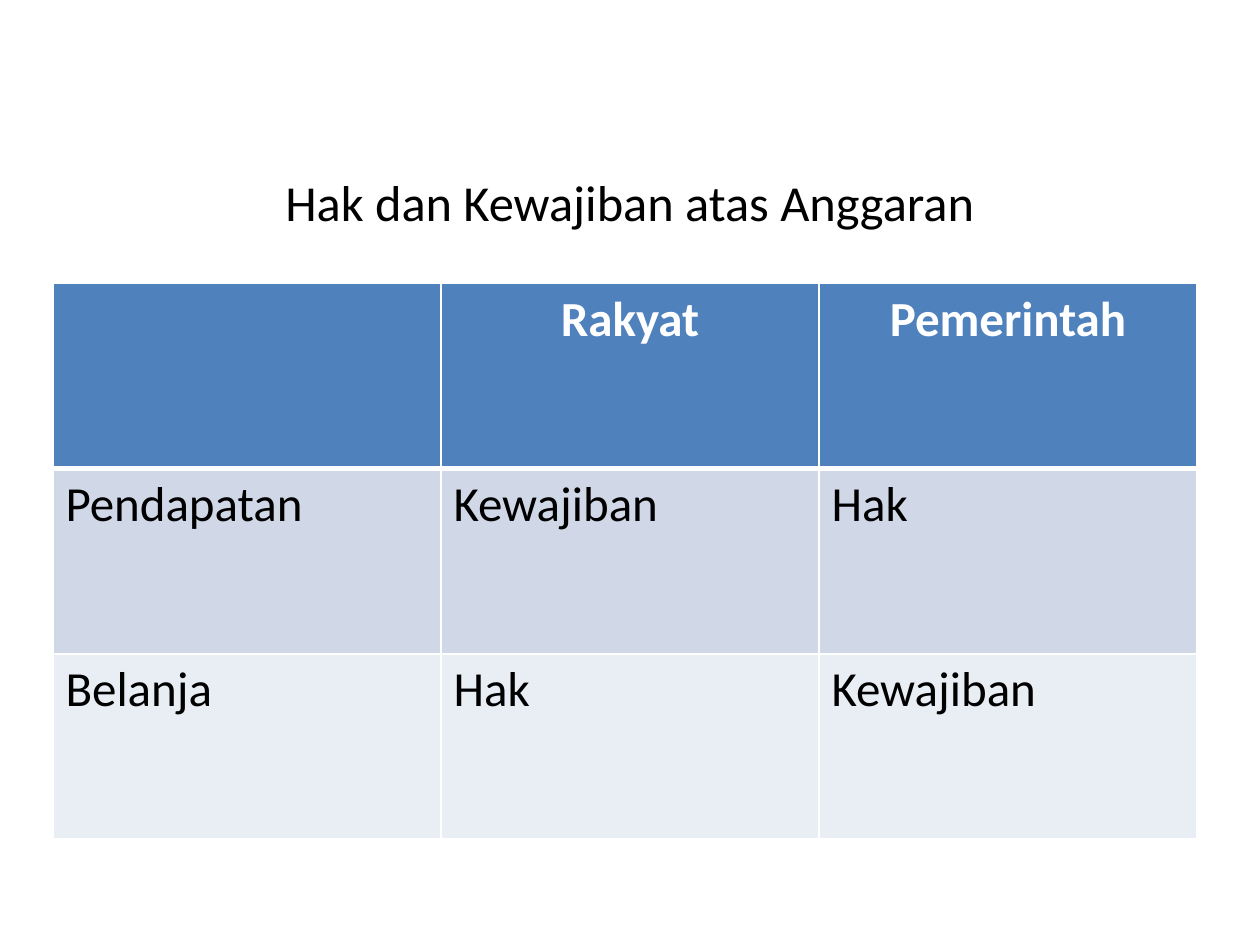
from dataclasses import dataclass

from lxml import etree
from pptx import Presentation
from pptx.dml.color import RGBColor
from pptx.enum.text import MSO_ANCHOR, PP_ALIGN
from pptx.oxml.ns import qn
from pptx.util import Inches, Pt

CENTER, LEFT = PP_ALIGN.CENTER, PP_ALIGN.LEFT
MIDDLE = MSO_ANCHOR.MIDDLE
TITLE_ONLY = 5


@dataclass(frozen=True)
class Theme:
    font: str = "Calibri"
    title_size: float = 28.8
    table_size: float = 28
    text: str = "000000"
    header_text: str = "FFFFFF"
    header_fill: str = "4F81BD"
    bands: tuple = ("D0D8E8", "E9EDF4")
    border: str = "FFFFFF"
    border_width: float = 1
    header_rule_width: float = 3


class SlideBuilder:
    """Holds the theme and the slide being filled."""

    def __init__(self, slide, theme):
        self.slide = slide
        self.theme = theme

    def add_run(self, paragraph, text, size, color, bold=False):
        run = paragraph.add_run()
        run.text = text
        run.font.name = self.theme.font
        run.font.size = Pt(size)
        run.font.bold = bold
        run.font.color.rgb = RGBColor.from_string(color)

    def title(self, text, left, top, width, height, top_inset):
        title = self.slide.shapes.title
        title.left, title.top = Inches(left), Inches(top)
        title.width, title.height = Inches(width), Inches(height)
        frame = title.text_frame
        frame.word_wrap = True
        frame.vertical_anchor = MIDDLE
        frame.margin_top = Inches(top_inset)
        paragraph = frame.paragraphs[0]
        paragraph.alignment = CENTER
        self.add_run(paragraph, text, self.theme.title_size, self.theme.text)

    def border_cell(self, cell, top_width, bottom_width):
        side = self.theme.border_width
        widths = {"lnL": side, "lnR": side, "lnT": top_width, "lnB": bottom_width}
        properties = cell._tc.get_or_add_tcPr()
        for position, (tag, width) in enumerate(widths.items()):
            line = etree.Element(qn(f"a:{tag}"), w=str(Pt(width)))
            fill = etree.SubElement(line, qn("a:solidFill"))
            etree.SubElement(fill, qn("a:srgbClr"), val=self.theme.border)
            properties.insert(position, line)

    def table(self, rows, left, top, column_widths, row_height):
        theme = self.theme
        table = self.slide.shapes.add_table(
            len(rows), len(column_widths), Inches(left), Inches(top),
            Inches(sum(column_widths)), Inches(row_height * len(rows))).table
        for column, width in zip(table.columns, column_widths):
            column.width = Inches(width)
        for r, labels in enumerate(rows):
            table.rows[r].height = Inches(row_height)
            header = r == 0
            fill = theme.header_fill if header else theme.bands[(r - 1) % 2]
            color = theme.header_text if header else theme.text
            top_width = theme.header_rule_width if r == 1 else theme.border_width
            bottom_width = theme.header_rule_width if header else theme.border_width
            for c, label in enumerate(labels):
                cell = table.cell(r, c)
                cell.fill.solid()
                cell.fill.fore_color.rgb = RGBColor.from_string(fill)
                self.border_cell(cell, top_width, bottom_width)
                paragraph = cell.text_frame.paragraphs[0]
                paragraph.alignment = CENTER if header else LEFT
                if label:
                    self.add_run(paragraph, label, theme.table_size, color, header)


def main():
    presentation = Presentation()
    presentation.slide_width, presentation.slide_height = Inches(10), Inches(7.5)
    slide = presentation.slides.add_slide(presentation.slide_layouts[TITLE_ONLY])
    builder = SlideBuilder(slide, Theme())
    builder.title("Hak dan Kewajiban atas Anggaran", 0.5, 0, 9, 2.67, top_inset=0.58)
    rights_and_duties = [
        ("", "Rakyat", "Pemerintah"),
        ("Pendapatan", "Kewajiban", "Hak"),
        ("Belanja", "Hak", "Kewajiban"),
    ]
    builder.table(rights_and_duties, 0.42, 2.25, (3.08, 3, 3), 1.47)
    presentation.save("out.pptx")


if __name__ == "__main__":
    main()
